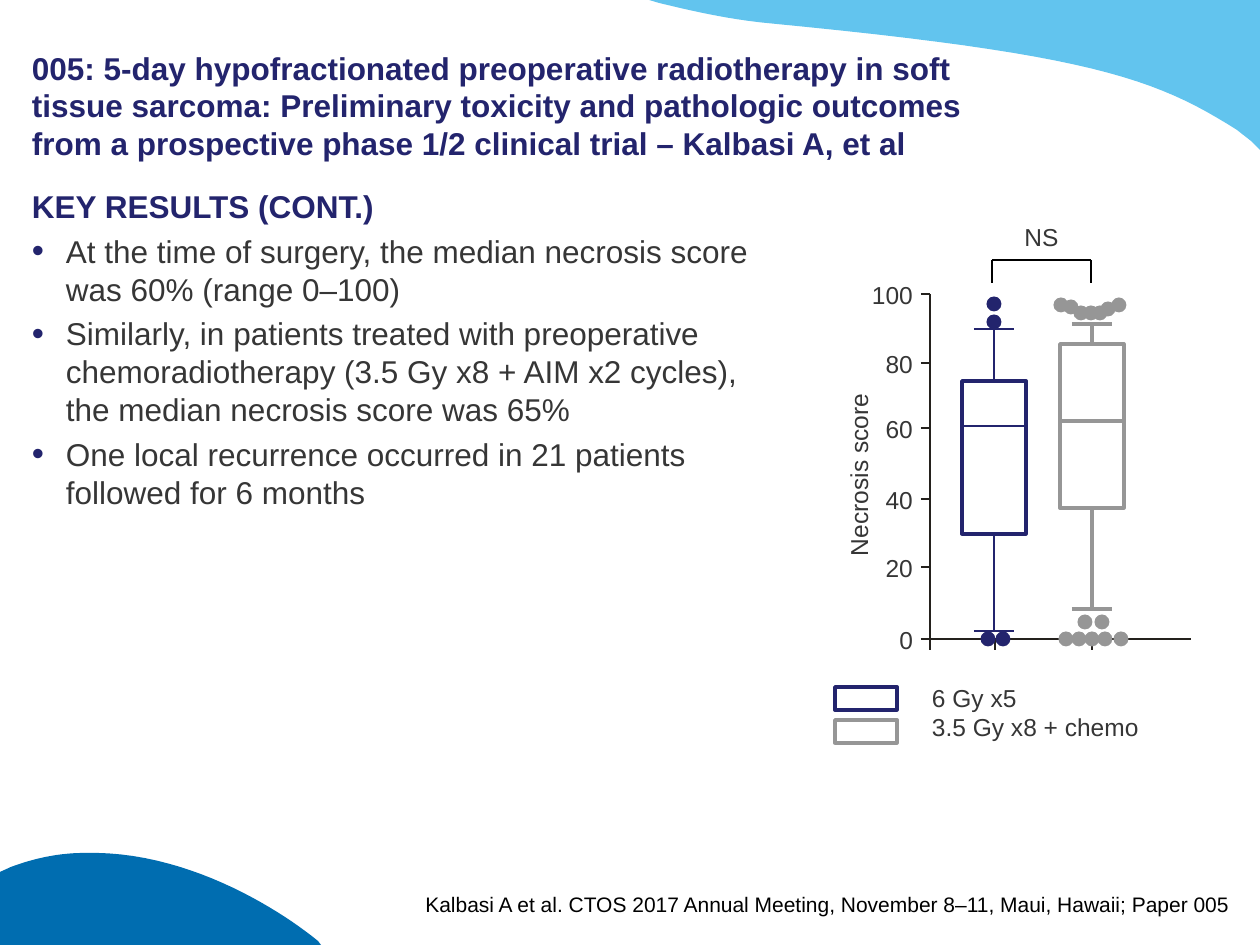
from lxml import etree
from pptx import Presentation
from pptx.dml.color import RGBColor
from pptx.enum.shapes import MSO_CONNECTOR, MSO_SHAPE
from pptx.enum.text import MSO_ANCHOR, PP_ALIGN
from pptx.oxml.ns import qn
from pptx.util import Pt

EMU_PER_PX = 914400 / 126
STRAIGHT = MSO_CONNECTOR.STRAIGHT
RECT, OVAL = MSO_SHAPE.RECTANGLE, MSO_SHAPE.OVAL
TOP, BOTTOM = MSO_ANCHOR.TOP, MSO_ANCHOR.BOTTOM
LEFT, CENTER, RIGHT = PP_ALIGN.LEFT, PP_ALIGN.CENTER, PP_ALIGN.RIGHT

NAVY, GREY, TEXT, AXIS = "23246D", "969696", "363636", "24211D"
BLACK, WHITE, SKY, BLUE = "000000", "FFFFFF", "62C4EE", "006DB0"
HEADING = {"size": Pt(18), "bold": True, "color": NAVY}
BODY = {"size": Pt(18), "color": TEXT}
LABEL = {"size": Pt(14), "color": TEXT}
SOURCE = {"size": Pt(12), "color": BLACK}
DOT = 15


def px(n):
    return round(n * EMU_PER_PX)


def rgb(color):
    return RGBColor.from_string(color)


def style(sp, fill=None, line=None, weight=2):
    sp.shadow.inherit = False
    if fill:
        sp.fill.solid()
        sp.fill.fore_color.rgb = rgb(fill)
    else:
        sp.fill.background()
    if line:
        sp.line.color.rgb = rgb(line)
        sp.line.width = Pt(weight)
    else:
        sp.line.fill.background()


def add_shape(s, kind, x, y, w, h, **look):
    sp = s.shapes.add_shape(kind, px(x), px(y), px(w), px(h))
    style(sp, **look)


def add_line(s, x1, y1, x2, y2, color, weight=1.5):
    sp = s.shapes.add_connector(STRAIGHT, px(x1), px(y1), px(x2), px(y2))
    sp.line.color.rgb = rgb(color)
    sp.line.width = Pt(weight)
    etree.SubElement(sp._element.spPr, qn("a:effectLst"))


def add_text(s, x, y, w, h, paragraphs, align=LEFT, anchor=TOP, wrap=False):
    """Place (text, format) paragraphs in a box without insets."""
    sp = s.shapes.add_textbox(px(x), px(y), px(w), px(h))
    tf = sp.text_frame
    tf.word_wrap, tf.vertical_anchor = wrap, anchor
    tf.margin_left = tf.margin_right = tf.margin_top = tf.margin_bottom = 0
    for i, (text, fmt) in enumerate(paragraphs):
        p = tf.add_paragraph() if i else tf.paragraphs[0]
        p.text, p.alignment = text, align
        for r in p.runs:
            r.font.name = "Arial"
            for key, value in fmt.items():
                if key == "color":
                    r.font.color.rgb = rgb(value)
                else:
                    setattr(r.font, key, value)
    return sp


def add_bullet(p, color, indent):
    pPr = p._p.get_or_add_pPr()
    pPr.set("marL", str(px(indent)))
    pPr.set("indent", str(-px(indent)))
    bu_color = etree.SubElement(pPr, qn("a:buClr"))
    etree.SubElement(bu_color, qn("a:srgbClr"), val=color)
    etree.SubElement(pPr, qn("a:buSzPct"), val="110000")
    etree.SubElement(pPr, qn("a:buFont"), typeface="Arial")
    etree.SubElement(pPr, qn("a:buChar"), char="•")


def bezier(points, steps=24):
    (x0, y0), (x1, y1), (x2, y2), (x3, y3) = points
    for i in range(1, steps + 1):
        t = i / steps
        a, b, c, d = (1 - t) ** 3, 3 * t * (1 - t) ** 2, 3 * t * t * (1 - t), t ** 3
        yield a * x0 + b * x1 + c * x2 + d * x3, a * y0 + b * y1 + c * y2 + d * y3


def add_wave(s, x, y, start, segments, color):
    """Fill an outline whose segments hold one point (line) or three (curve)."""
    outline = [start]
    for seg in segments:
        outline += bezier([outline[-1], *seg]) if len(seg) == 3 else seg
    points = [(px(x + dx), px(y + dy)) for dx, dy in outline]
    builder = s.shapes.build_freeform(*points[0], scale=1.0)
    builder.add_line_segments(points[1:], close=True)
    style(builder.convert_to_shape(), fill=color)


def add_background(s):
    add_wave(s, 649, 0, (0, 0), [
        [(611, 0)], [(611, 150)], [(602, 141)],
        [(597, 137), (593, 134), (588, 130)],
        [(506, 78), (440, 54), (117, 23)],
        [(78, 19), (43, 11), (10, 3)]], SKY)
    add_wave(s, 0, 852, (84, 1), [
        [(183, -2), (275, 54), (318, 89)],
        [(321, 93)], [(0, 93)], [(0, 20)], [(11, 15)],
        [(35, 6), (60, 1), (84, 1)]], BLUE)


def add_results(s, x, y, w, h):
    bullets = [
        "At the time of surgery, the median necrosis score \vwas 60% (range 0–100)",
        "Similarly, in patients treated with preoperative \v"
        "chemoradiotherapy (3.5 Gy x8 + AIM x2 cycles), \v"
        "the median necrosis score was 65%",
        "One local recurrence occurred in 21 patients followed for 6 months",
    ]
    paragraphs = [("KEY RESULTS (CONT.)", HEADING)] + [(b, BODY) for b in bullets]
    tf = add_text(s, x, y, w, h, paragraphs, wrap=True).text_frame
    for i, p in enumerate(tf.paragraphs):
        p.space_after = Pt(4)
        if i:
            add_bullet(p, NAVY, 34)


def add_axes(s, x, y, w, h):
    ticks = {100: 0, 80: 69, 60: 134, 40: 205, 20: 273, 0: h}
    for value, dy in ticks.items():
        add_line(s, x - 9, y + dy, x, y + dy, AXIS)
        add_text(s, x - 67, y + dy - 14, 50, 30, [(str(value), LABEL)], RIGHT)
    for dx in (0, 65, 162):
        add_line(s, x + dx, y + h, x + dx, y + h + 11, AXIS)
    add_line(s, x, y, x, y + h, AXIS)
    add_line(s, x, y + h, x + w, y + h, AXIS)
    title = add_text(s, x - 166, y + 166, 189, 30, [("Necrosis score", LABEL)], CENTER)
    title.rotation = 270


def add_boxplot(s, x, y, low, q1, median, q3, high, dots, color, weight):
    """Draw one series centred on x; the other values are px below y."""
    for dx, dy in dots:
        add_shape(s, OVAL, x + dx - DOT / 2, y + dy - DOT / 2, DOT, DOT, fill=color)
    for cap in (high, low):
        add_line(s, x - 20, y + cap, x + 20, y + cap, color, weight)
    add_line(s, x, y + high, x, y + low, color, weight)
    add_shape(s, RECT, x - 32, y + q3, 64, q1 - q3, fill=WHITE, line=color)
    add_line(s, x - 32, y + median, x + 32, y + median, color, weight)


def add_bracket(s, x, y, w, h, text):
    add_line(s, x, y, x + w, y, BLACK)
    for edge in (x, x + w):
        add_line(s, edge, y, edge, y + h, BLACK)
    add_text(s, x, y - 38, w, 30, [(text, LABEL)], CENTER)


def add_legend(s, x, y, entries):
    for i, (_, color) in enumerate(entries):
        add_shape(s, RECT, x, y + 33 * i, 62, 23, fill=WHITE, line=color)
    add_text(s, x + 97, y - 4, 215, 60, [(name, LABEL) for name, _ in entries])


def add_necrosis_plot(s, x, y, w, h):
    add_axes(s, x, y, w, h)
    add_bracket(s, x + 62, y - 34, 99, 23, "NS")
    navy_dots = [(0, 10), (0, 28), (-6, h), (9, h)]
    grey_dots = [(-31, 11), (-21, 13), (-11, 19), (-1, 19), (8, 19), (16, 15), (27, 11),
                 (-7, 328), (10, 328)] + [(dx, h) for dx in (-26, -13, 0, 13, 29)]
    add_boxplot(s, x + 64, y, 337, 240, 132, 87, 35, navy_dots, NAVY, 1.5)
    add_boxplot(s, x + 162, y, 315, 214, 127, 50, 30, grey_dots, GREY, 2)
    add_legend(s, x - 95, y + 393, [("6 Gy x5", NAVY), ("3.5 Gy x8 + chemo", GREY)])


def main():
    prs = Presentation()
    prs.slide_width, prs.slide_height = px(1260), px(945)
    s = prs.slides.add_slide(prs.slide_layouts[6])
    add_background(s)
    add_text(s, 32, 32, 983, 130, [(
        "005: 5-day hypofractionated preoperative radiotherapy in soft tissue sarcoma: "
        "Preliminary toxicity and pathologic outcomes from a prospective phase 1/2 "
        "clinical trial – Kalbasi A, et al", HEADING)], anchor=BOTTOM, wrap=True)
    add_results(s, 32, 187, 767, 720)
    add_text(s, 420, 892, 810, 25, [(
        "Kalbasi A et al. CTOS 2017 Annual Meeting, November 8–11, Maui, Hawaii; Paper 005",
        SOURCE)], RIGHT, BOTTOM)
    add_necrosis_plot(s, 930, 294, 261, 345)
    prs.save("out.pptx")


if __name__ == "__main__":
    main()
